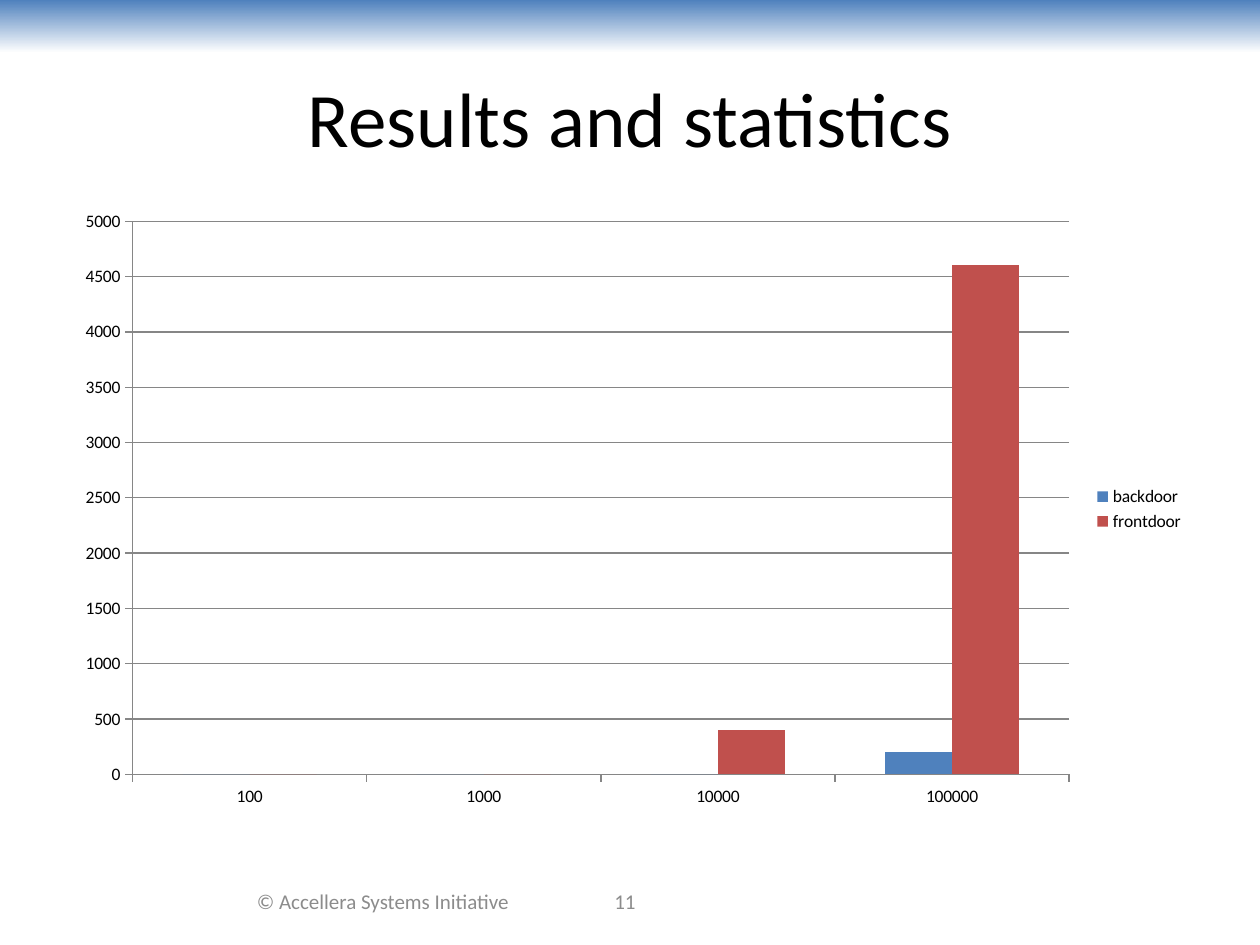
"""Build the results slide: gradient band, title, column chart and footer."""
from pptx import Presentation
from pptx.chart.data import CategoryChartData
from pptx.dml.color import RGBColor
from pptx.enum.chart import XL_CHART_TYPE, XL_LEGEND_POSITION, XL_TICK_MARK
from pptx.enum.shapes import MSO_SHAPE
from pptx.enum.text import MSO_ANCHOR, PP_ALIGN
from pptx.util import Inches, Pt

BLUE = RGBColor(0x4F, 0x81, 0xBD)
RED = RGBColor(0xC0, 0x50, 0x4D)
WHITE = RGBColor(0xFF, 0xFF, 0xFF)
BLACK = RGBColor(0, 0, 0)
GREY = RGBColor(0x8C, 0x8C, 0x8C)
LINE = RGBColor(0x86, 0x86, 0x86)
COLUMN = XL_CHART_TYPE.COLUMN_CLUSTERED
RIGHT = XL_LEGEND_POSITION.RIGHT
OUT, NONE = XL_TICK_MARK.OUTSIDE, XL_TICK_MARK.NONE
MIDDLE, CENTER = MSO_ANCHOR.MIDDLE, PP_ALIGN.CENTER


def style(font, size, color):
    for key, val in {"name": "Calibri", "size": Pt(size), "bold": False}.items():
        setattr(font, key, val)
    font.color.rgb = color


def write(box, text, size, color):
    frame = box.text_frame
    for key, val in {"text": text, "word_wrap": True, "vertical_anchor": MIDDLE}.items():
        setattr(frame, key, val)
    line = frame.paragraphs[0]
    line.alignment = CENTER
    style(line.font, size, color)


deck = Presentation()
deck.slide_width, deck.slide_height = Inches(10), Inches(7.5)
wide = deck.slide_width
edge = int(wide * 0.05)
slide = deck.slides.add_slide(deck.slide_layouts[5])
shapes = slide.shapes

band = shapes.add_shape(MSO_SHAPE.RECTANGLE, 0, 0, wide, Inches(0.42))
band.shadow.inherit = False
band.line.fill.background()
band.fill.gradient()
band.fill.gradient_angle = 270
for stop, color, spot in zip(band.fill.gradient_stops, (BLUE, WHITE), (0, 1)):
    stop.color.rgb = color
    stop.position = spot

title = shapes.title
place = {"left": edge, "top": Inches(0.3), "width": wide - 2 * edge, "height": Inches(1.25)}
for key, val in place.items():
    setattr(title, key, val)
write(title, "Results and statistics", 44, BLACK)
band._element.addnext(title._element)

for text, left, width in (("© Accellera Systems Initiative", 1.83, 2.42), ("11", 4, 1.92)):
    box = shapes.add_textbox(Inches(left), Inches(6.95), Inches(width), Inches(0.4))
    write(box, text, 12, GREY)

data = CategoryChartData()
data.categories = ["100", "1000", "10000", "100000"]
data.add_series("backdoor", (0, 0, 0, 200))
data.add_series("frontdoor", (0, 0, 400, 4600))
chart = shapes.add_chart(COLUMN, edge, Inches(1.58), wide - 2 * edge, Inches(4.92), data).chart
style(chart.font, 10, BLACK)
chart.has_title = False
chart.has_legend = True
chart.legend.position = RIGHT
chart.legend.include_in_layout = False

plot = chart.plots[0]
for key, val in {"gap_width": 150, "overlap": 0, "vary_by_categories": False}.items():
    setattr(plot, key, val)
for series, color in zip(plot.series, (BLUE, RED)):
    series.format.fill.solid()
    series.format.fill.fore_color.rgb = color

value = chart.value_axis
for key, val in {"minimum_scale": 0, "maximum_scale": 5000, "major_unit": 500}.items():
    setattr(value, key, val)
value.has_major_gridlines = True
for axis in (chart.category_axis, value):
    axis.major_tick_mark, axis.minor_tick_mark = OUT, NONE
for part in (chart.category_axis, value, value.major_gridlines):
    part.format.line.color.rgb = LINE
    part.format.line.width = Pt(0.75)

deck.save("out.pptx")
